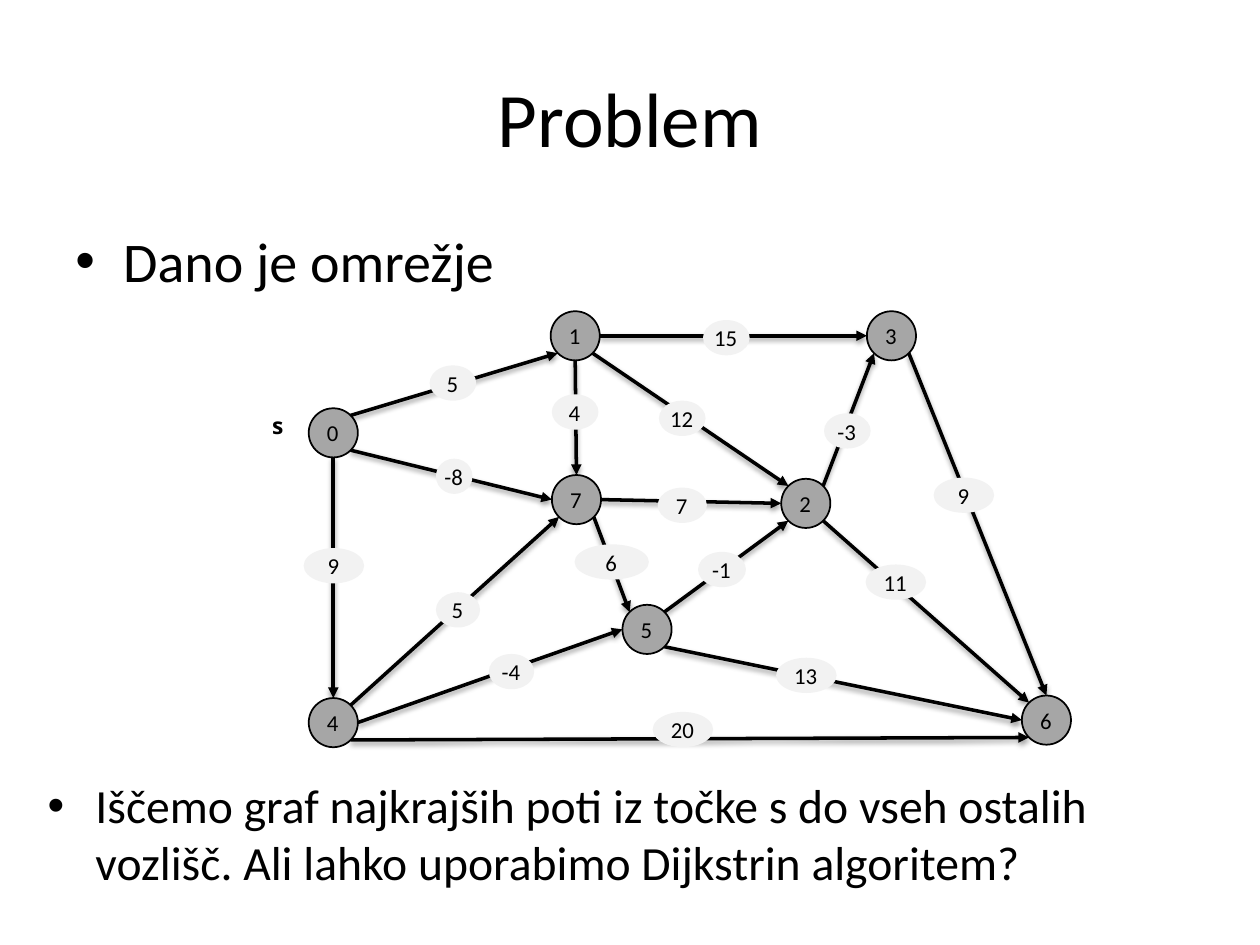
"""Build the shortest-path problem slide with its weighted directed graph."""
from math import cos, radians, sin

from lxml import etree
from pptx import Presentation
from pptx.dml.color import RGBColor
from pptx.enum.shapes import MSO_CONNECTOR, MSO_SHAPE
from pptx.enum.text import MSO_ANCHOR, PP_ALIGN
from pptx.oxml import parse_xml
from pptx.oxml.ns import nsdecls, qn
from pptx.util import Inches, Pt

STRAIGHT = MSO_CONNECTOR.STRAIGHT
OVAL = MSO_SHAPE.OVAL
CENTER = PP_ALIGN.CENTER
MIDDLE = MSO_ANCHOR.MIDDLE

BLACK = RGBColor(0x00, 0x00, 0x00)
NODE_GRAY = RGBColor(0xA6, 0xA6, 0xA6)
LABEL_GRAY = RGBColor(0xF2, 0xF2, 0xF2)

TITLE = "Problem"
BULLETS = [
    ("Dano je omrežje", 0.5, 1.75, 32),
    ("Iščemo graf najkrajših poti iz točke s do vseh ostalih vozlišč. "
     "Ali lahko uporabimo Dijkstrin algoritem?", 0.28, 6.11, 27.2),
]

NODE_SIZE = 0.39
LABEL_HEIGHT = 0.28
NODES = {
    "0": (2.45, 3.24),
    "4": (2.45, 5.54),
    "7": (4.38, 3.77),
    "1": (4.37, 2.47),
    "3": (6.88, 2.47),
    "5": (4.94, 4.8),
    "2": (6.2, 3.8),
    "6": (8.11, 5.52),
}
ANGLES = {"E": 0, "SE": 45, "S": 90, "SW": 135, "W": 180, "NW": 225, "N": 270, "NE": 315}

# source, side, target, side, weight, label left, label top, label width
EDGES = [
    ("7", "E", "2", "W", "7", 5.22, 3.87, 0.39),
    ("2", "NE", "3", "SW", "-3", 6.54, 3.28, 0.37),
    ("1", "SE", "2", "NW", "12", 5.23, 3.18, 0.37),
    ("1", "E", "3", "W", "15", 5.58, 2.54, 0.37),
    ("3", "SE", "6", "N", "9", 7.41, 3.79, 0.48),
    ("2", "SE", "6", "NW", "11", 6.87, 4.48, 0.48),
    ("7", "SE", "5", "NW", "6", 4.56, 4.32, 0.59),
    ("5", "NE", "2", "SW", "-1", 5.54, 4.38, 0.38),
    ("5", "SE", "6", "W", "13", 6.16, 5.22, 0.48),
    ("4", "SE", "6", "SW", "20", 5.18, 5.65, 0.48),
    ("4", "E", "5", "W", "-4", 3.88, 5.19, 0.36),
    ("4", "NE", "7", "SW", "5", 3.46, 4.7, 0.35),
    ("0", "S", "4", "N", "9", 2.41, 4.35, 0.48),
    ("0", "SE", "7", "W", "-8", 3.46, 3.64, 0.29),
    ("0", "NE", "1", "SW", "5", 3.41, 2.9, 0.37),
    ("1", "S", "7", "N", "4", 4.38, 3.13, 0.37),
]


def write(sp, text, size, font="Calibri", bold=False, align=None):
    tf = sp.text_frame
    tf.text = text
    p = tf.paragraphs[0]
    p.alignment = align
    r = p.runs[0]
    r.font.name = font
    r.font.size = Pt(size)
    r.font.bold = bold
    r.font.color.rgb = BLACK
    return tf


def set_insets(tf, right):
    tf.margin_left = tf.margin_top = tf.margin_bottom = 0
    tf.margin_right = Inches(right)


def add_text(slide, text, left, top, width, height, size, **style):
    sp = slide.shapes.add_textbox(Inches(left), Inches(top), Inches(width), Inches(height))
    tf = write(sp, text, size, **style)
    tf.word_wrap = True
    return tf


def add_bullet(slide, text, left, top, size):
    tf = add_text(slide, text, left, top, 9, 1.06, size)
    pPr = tf.paragraphs[0]._p.get_or_add_pPr()
    pPr.set("marL", str(Inches(0.38)))
    pPr.set("indent", str(-Inches(0.38)))
    etree.SubElement(pPr, qn("a:buFont"), typeface="Arial")
    etree.SubElement(pPr, qn("a:buChar"), char="•")


def add_oval(slide, text, left, top, width, height, fill, outlined):
    sp = slide.shapes.add_shape(OVAL, Inches(left), Inches(top), Inches(width), Inches(height))
    sp.shadow.inherit = False
    sp.fill.solid()
    sp.fill.fore_color.rgb = fill
    if outlined:
        sp.line.color.rgb = BLACK
        sp.line.width = Pt(1)
    else:
        sp.line.fill.background()
    tf = write(sp, text, 13, align=CENTER)
    tf.vertical_anchor = MIDDLE
    set_insets(tf, 0.01)


def node_side(node, side):
    radius = NODE_SIZE / 2
    angle = radians(ANGLES[side])
    left, top = NODES[node]
    return Inches(left + radius + radius * cos(angle)), Inches(top + radius + radius * sin(angle))


def add_arrow(slide, start, end):
    line = slide.shapes.add_connector(STRAIGHT, *start, *end)
    line.line.color.rgb = BLACK
    line.line.width = Pt(2)
    etree.SubElement(line.line._get_or_add_ln(), qn("a:tailEnd"), type="triangle")
    line._element.spPr.append(parse_xml(
        f'<a:effectLst {nsdecls("a")}><a:outerShdw blurRad="{Pt(3.1)}" dist="{Pt(1.6)}" '
        'dir="5400000" rotWithShape="0"><a:srgbClr val="000000"><a:alpha val="38000"/>'
        '</a:srgbClr></a:outerShdw></a:effectLst>'))


def main():
    prs = Presentation()
    prs.slide_width, prs.slide_height = Inches(10), Inches(7.5)
    slide = prs.slides.add_slide(prs.slide_layouts[6])

    add_text(slide, TITLE, 0.5, 0.3, 9, 1.25, 44, align=CENTER).vertical_anchor = MIDDLE
    for bullet in BULLETS:
        add_bullet(slide, *bullet)

    for source, source_side, target, target_side, *_ in EDGES:
        add_arrow(slide, node_side(source, source_side), node_side(target, target_side))
    for name, (left, top) in NODES.items():
        add_oval(slide, name, left, top, NODE_SIZE, NODE_SIZE, NODE_GRAY, True)
    for *_, weight, left, top, width in EDGES:
        add_oval(slide, weight, left, top, width, LABEL_HEIGHT, LABEL_GRAY, False)

    tf = add_text(slide, "s", 2.12, 3.27, 0.19, 0.22, 13, font="Open Sans", bold=True)
    tf.word_wrap = False
    set_insets(tf, 0.05)
    tf.paragraphs[0]._p.get_or_add_pPr().set("marL", str(Inches(0.04)))

    prs.save("out.pptx")


if __name__ == "__main__":
    main()
